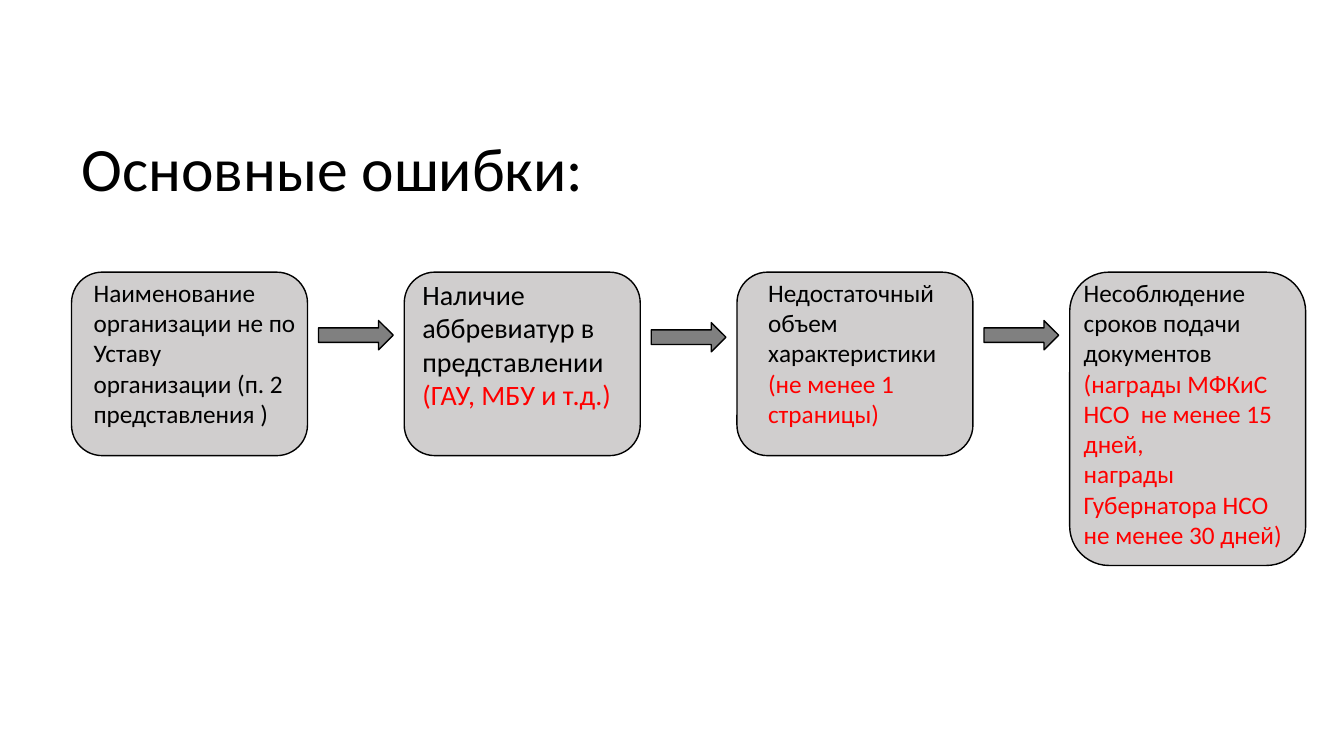
import pptx
import pptx.dml.color
import pptx.enum.shapes
import pptx.enum.text
import pptx.util

Inches = pptx.util.Inches
Shapes = pptx.enum.shapes.MSO_SHAPE
Anchor = pptx.enum.text.MSO_ANCHOR

COLORS = {"black": "000000", "red": "FF0000", "card": "D0CECE", "arrow": "808080"}
CARD_WIDTH, ARROW_WIDTH, ARROW_HEIGHT, GAP = 2.34, 0.74, 0.29, 0.11
CARD_STEP = 3.3

MISTAKES = [
    {"height": 1.82, "inset": 0.12, "width": 2.22, "size": 18, "arrow_drop": 0.48,
     "lines": [("Наименование организации не по Уставу организации (п. 2 представления )", "black")]},
    {"height": 1.82, "inset": 0.08, "width": 2.25, "size": 20, "arrow_drop": 0.5,
     "lines": [("Наличие аббревиатур в представлении", "black"),
               ("(ГАУ, МБУ и т.д.)", "red")]},
    {"height": 1.82, "inset": 0.21, "width": 2.34, "size": 18, "arrow_drop": 0.48,
     "lines": [("Недостаточный объем характеристики", "black"),
               ("(не менее 1 страницы)", "red")]},
    {"height": 2.91, "inset": 0.04, "width": 2.25, "size": 18, "arrow_drop": None,
     "lines": [("Несоблюдение сроков подачи документов", "black"),
               ("(награды МФКиС НСО  не менее 15 дней,", "red"),
               ("награды Губернатора НСО не менее 30 дней)", "red")]},
]


def color(name):
    """Return the named colour."""
    return pptx.dml.color.RGBColor.from_string(COLORS[name])


def add_text(page, lines, left, top, width, height, size=18, anchor=Anchor.TOP, spacing=1.0):
    """Place a text box with one paragraph for each (text, colour) line."""
    box = page.shapes.add_textbox(Inches(left), Inches(top), Inches(width), Inches(height))
    frame = box.text_frame
    frame.word_wrap = True
    frame.vertical_anchor = anchor
    for index, (text, shade) in enumerate(lines):
        para = frame.paragraphs[0] if index == 0 else frame.add_paragraph()
        para.line_spacing = spacing
        span = para.add_run()
        span.text = text
        span.font.name = "Calibri"
        span.font.size = pptx.util.Pt(size)
        span.font.color.rgb = color(shade)


def add_outlined(page, kind, fill, left, top, width, height):
    """Place a filled preset shape with a thin black outline."""
    shape = page.shapes.add_shape(kind, Inches(left), Inches(top), Inches(width), Inches(height))
    shape.shadow.inherit = False
    shape.fill.solid()
    shape.fill.fore_color.rgb = color(fill)
    shape.line.color.rgb = color("black")
    shape.line.width = pptx.util.Pt(1)


def add_mistake(page, mistake, left, top):
    """Place one card with its text and the arrow that leads to the next card."""
    height = mistake["height"]
    add_outlined(page, Shapes.ROUNDED_RECTANGLE, "card", left, top, CARD_WIDTH, height)
    add_text(page, mistake["lines"], left + mistake["inset"], top,
             mistake["width"], height, size=mistake["size"])
    if mistake["arrow_drop"] is not None:
        add_outlined(page, Shapes.RIGHT_ARROW, "arrow", left + CARD_WIDTH + GAP,
                     top + mistake["arrow_drop"], ARROW_WIDTH, ARROW_HEIGHT)


def add_chain(page, left, top):
    """Place the row of mistakes from left to right."""
    for index, mistake in enumerate(MISTAKES):
        add_mistake(page, mistake, left + index * CARD_STEP, top)


def main():
    """Build the slide and save the deck."""
    deck = pptx.Presentation()
    deck.slide_width, deck.slide_height = Inches(13.33), Inches(7.5)
    page = deck.slides.add_slide(deck.slide_layouts[6])
    add_text(page, [("Основные ошибки:", "black")], 0.71, 0.98, 11.5, 1.45,
             size=44, anchor=Anchor.MIDDLE, spacing=0.9)
    add_chain(page, 0.71, 2.7)
    deck.save("out.pptx")


if __name__ == "__main__":
    main()
